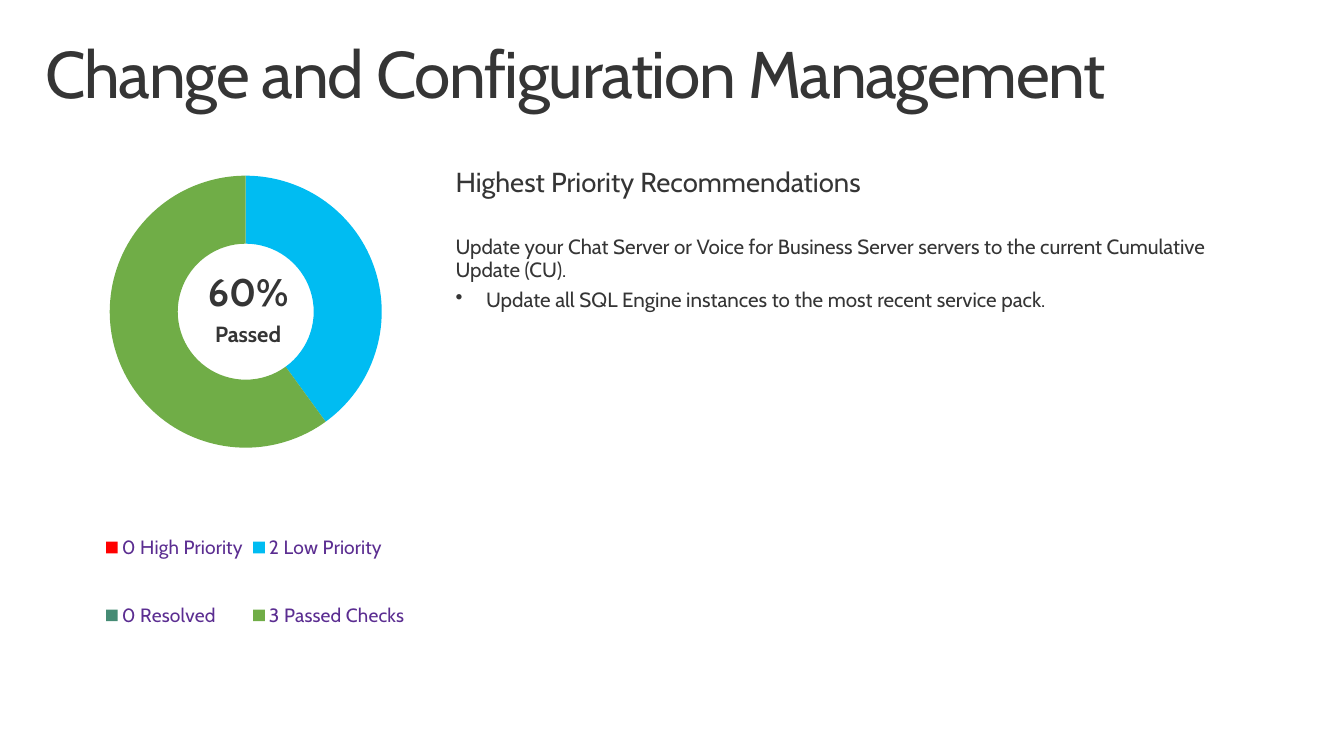
from lxml import etree
from pptx import Presentation
from pptx import util as u
from pptx.chart import data as cd
from pptx.dml.color import RGBColor
from pptx.enum import chart as ch, text as t
from pptx.oxml import ns

COLS, ROWS = 136, 76.5
CELL = u.Inches(0.1)
FONT = "Cabin"
INK = RGBColor(0x35, 0x35, 0x35)
PURPLE = RGBColor(0x5B, 0x2D, 0x91)
RED = RGBColor(0xFF, 0x00, 0x00)
NAVY = RGBColor(0x00, 0x1D, 0x49)
BLUE = RGBColor(0x00, 0xBC, 0xF2)
MAGENTA = RGBColor(0xA3, 0x00, 0x8F)
TEAL = RGBColor(0x45, 0x8B, 0x74)
GREY = RGBColor(0xD1, 0xD1, 0xD1)
GREEN = RGBColor(0x70, 0xAD, 0x47)

# label, percent, colour; the unlabelled slices separate the groups
CHECKS = [
    ("0 High Priority ", 0, RED),
    ("", None, NAVY),
    ("2 Low Priority", 40, BLUE),
    ("", None, MAGENTA),
    ("0 Resolved", 0, TEAL),
    ("", None, GREY),
    ("3 Passed Checks", 60, GREEN),
]


def grid(*cells):
    return [int(c * CELL) for c in cells]


def set_all(obj, **values):
    for name, value in values.items():
        setattr(obj, name, value)


def set_font(font, size, color=INK, bold=False):
    set_all(font, name=FONT, size=u.Pt(size), bold=bold)
    font.color.rgb = color


def set_frame(tf, side, top):
    x, y = grid(side, top)
    set_all(tf, word_wrap=True, auto_size=t.MSO_AUTO_SIZE.NONE,
            vertical_anchor=t.MSO_ANCHOR.TOP,
            margin_left=x, margin_right=x, margin_top=y, margin_bottom=y)


def add_bullet(p, indent):
    pPr = p._p.get_or_add_pPr()
    pPr.set("marL", str(indent))
    pPr.set("indent", str(-indent))
    etree.SubElement(pPr, ns.qn("a:buChar")).set("char", "•")


def add_title(s, title):
    sp = s.shapes.title
    sp.left, sp.top, sp.width, sp.height = grid(3, 3.2, 130, 10)
    set_frame(sp.text_frame, 1.6, 1)
    p = sp.text_frame.paragraphs[0]
    set_all(p, alignment=t.PP_ALIGN.LEFT, line_spacing=0.9)
    r = p.add_run()
    r.text = title
    set_font(r.font, 48)
    r._r.get_or_add_rPr().set("spc", "-100")


def add_text(s, cells, lines, align=t.PP_ALIGN.LEFT):
    """Add a text box; each line is (text, size, bold, space after, bulleted)."""
    tf = s.shapes.add_textbox(*grid(*cells)).text_frame
    set_frame(tf, 2, 1.6)
    for i, (words, size, bold, after, bulleted) in enumerate(lines):
        p = tf.add_paragraph() if i else tf.paragraphs[0]
        set_all(p, alignment=align, line_spacing=0.9, space_after=u.Pt(after))
        r = p.add_run()
        r.text = words
        set_font(r.font, size, bold=bold)
        if bulleted:
            add_bullet(p, grid(3.1)[0])


def place(parent, index, shares, inner=False):
    """Lay out a chart part by its x, y, w and h shares of the chart."""
    for old in parent.findall(ns.qn("c:layout")):
        parent.remove(old)
    layout = etree.Element(ns.qn("c:layout"))
    manual = etree.SubElement(layout, ns.qn("c:manualLayout"))
    values = {"layoutTarget": "inner"} if inner else {}
    values.update(xMode="edge", yMode="edge")
    values.update(zip("xywh", shares))
    for tag, value in values.items():
        etree.SubElement(manual, ns.qn("c:" + tag)).set("val", str(value))
    parent.insert(index, layout)


def hide_legend_entries(legend, indexes):
    for n, idx in enumerate(indexes):
        entry = etree.Element(ns.qn("c:legendEntry"))
        etree.SubElement(entry, ns.qn("c:idx")).set("val", str(idx))
        etree.SubElement(entry, ns.qn("c:delete")).set("val", "1")
        legend.insert(1 + n, entry)


def add_doughnut(s, cells, checks):
    data = cd.CategoryChartData()
    data.categories = [label for label, _, _ in checks]
    data.add_series("Series 1", [value for _, value, _ in checks])
    chart = s.shapes.add_chart(ch.XL_CHART_TYPE.DOUGHNUT, *grid(*cells), data).chart
    set_all(chart, has_title=False, has_legend=True)
    set_font(chart.font, 10)

    plot = chart.plots[0]
    set_all(plot, vary_by_categories=True, has_data_labels=False)
    for hole in chart._chartSpace.iter(ns.qn("c:holeSize")):
        hole.set("val", "68")
    for i, (_, _, color) in enumerate(checks):
        fmt = plot.series[0].points[i].format
        fmt.fill.solid()
        fmt.fill.fore_color.rgb = color
        fmt.line.fill.background()
    place(chart._chartSpace.chart.plotArea, 0, (0.23, 0.07, 0.57, 0.56), inner=True)

    legend = chart.legend
    set_all(legend, position=ch.XL_LEGEND_POSITION.BOTTOM, include_in_layout=False)
    set_font(legend.font, 14, PURPLE)
    place(legend._element, 1, (0.21, 0.66, 0.65, 0.31))
    hide_legend_entries(legend._element,
                        [i for i, check in enumerate(checks) if not check[0]])


def main():
    prs = Presentation()
    set_all(prs, slide_width=int(COLS * CELL), slide_height=int(ROWS * CELL))
    s = prs.slides.add_slide(prs.slide_layouts[5])
    add_title(s, "Change and Configuration Management")
    add_doughnut(s, (0, 11, 48.3, 58.7), CHECKS)
    add_text(s, (18, 26.1, 14.2, 31.9), [
        ("60%", 28, True, 6, False),
        ("Passed", 16, True, 6, False),
    ], t.PP_ALIGN.CENTER)
    add_text(s, (44.1, 15.5, 84.1, 12.5), [
        ("Highest Priority Recommendations", 20, False, 28, False),
        ("Update your Chat Server or Voice for Business Server servers "
         "to the current Cumulative Update (CU).", 15, False, 6, False),
        ("Update all SQL Engine instances to the most recent service pack.",
         15, False, 6, True),
    ])
    prs.save("out.pptx")


if __name__ == "__main__":
    main()
